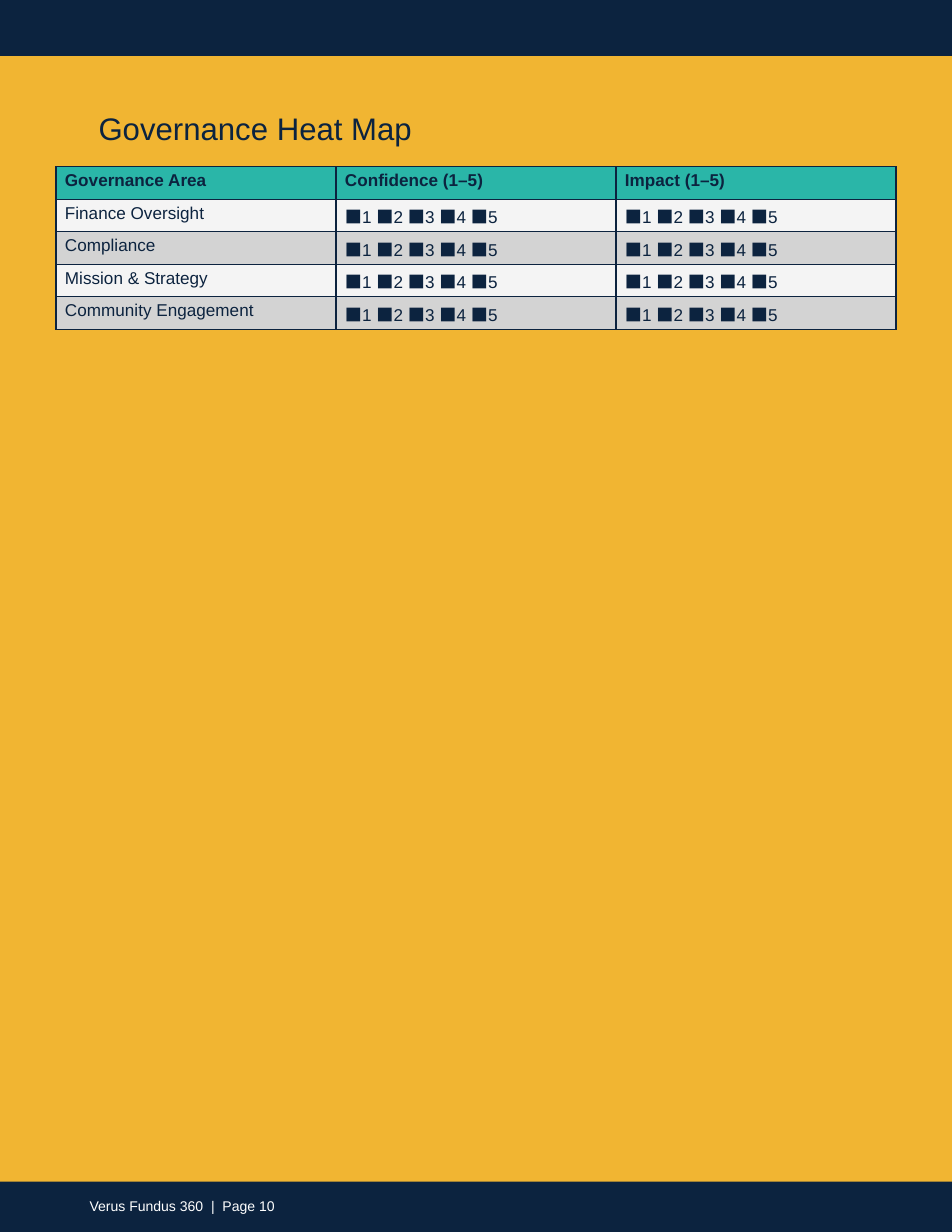
from lxml.etree import SubElement
from pptx import Presentation
from pptx.dml.color import RGBColor
from pptx.enum.shapes import MSO_SHAPE as Preset
from pptx.enum.text import MSO_ANCHOR as Anchor, MSO_AUTO_SIZE as AutoSize, PP_ALIGN as Align
from pptx.oxml.ns import qn
from pptx.util import Inches, Pt

COLORS = {"navy": "0C233F", "gold": "F1B532", "teal": "2AB6A8",
          "light": "F4F4F4", "gray": "D3D3D3", "white": "FFFFFF"}
COLORS = {name: RGBColor.from_string(code) for name, code in COLORS.items()}
BOX = "■"
SCALE = " ".join(f"{BOX}{score}" for score in range(1, 6))
HEADINGS = ["Governance Area", "Confidence (1–5)", "Impact (1–5)"]
AREAS = ["Finance Oversight", "Compliance", "Mission & Strategy", "Community Engagement"]
WIDTH, HEIGHT = 8.5, 11
COLUMN, ROW = 2.5, 0.29


def write(frame, text, size=11, color="navy", bold=False, indent=0.01, top=0):
    """Fill a text frame with one left-aligned line, setting box symbols in their own font."""
    frame.margin_left = frame.margin_right = frame.margin_bottom = 0
    frame.margin_top = Inches(top)
    para = frame.paragraphs[0]
    para.alignment = Align.LEFT
    properties = para._p.get_or_add_pPr()
    properties.set("marL", str(Inches(indent)))
    properties.set("indent", "0")
    pieces = text.replace(BOX, f"\n{BOX}\n").split("\n")
    for piece in filter(None, pieces):
        span = para.add_run()
        span.text = piece
        font = span.font
        font.name = "Noto Sans CJK JP" if piece == BOX else "Arial"
        font.size, font.bold = Pt(size), bold
        font.color.rgb = COLORS[color]
        if piece == BOX:
            SubElement(font._element, qn("a:ea")).set("typeface", font.name)


def add_borders(cell, color="navy", width=0.75):
    properties = cell._tc.get_or_add_tcPr()
    for side in ("lnL", "lnR", "lnT", "lnB"):
        line = SubElement(properties, qn(f"a:{side}"), w=str(Pt(width)))
        fill = SubElement(line, qn("a:solidFill"))
        SubElement(fill, qn("a:srgbClr"), val=str(COLORS[color]))


deck = Presentation()
deck.slide_width, deck.slide_height = Inches(WIDTH), Inches(HEIGHT)
page = deck.slides.add_slide(deck.slide_layouts[5])
page.background.fill.solid()
page.background.fill.fore_color.rgb = COLORS["gold"]

# Header and footer bands
for top, height in ((0, 0.5), (HEIGHT - 0.45, 0.45)):
    band = page.shapes.add_shape(Preset.RECTANGLE, 0, Inches(top), Inches(WIDTH), Inches(height))
    band.shadow.inherit = False
    band.fill.solid()
    band.fill.fore_color.rgb = COLORS["navy"]
    band.line.fill.background()

# Title and footer text
title = page.shapes.title
title.left, title.top, title.width, title.height = map(Inches, (0.87, 0.97, 2.82, 0.36))
title.text_frame.vertical_anchor = Anchor.TOP
title.text_frame.auto_size = AutoSize.NONE
title.text_frame.word_wrap = False
write(title.text_frame, "Governance Heat Map", size=20, top=0.01)

footer = page.shapes.add_textbox(*map(Inches, (0.79, 10.69, 1.81, 0.17)))
footer.text_frame.word_wrap = False
write(footer.text_frame, "Verus Fundus 360  |  Page 10", size=9, color="white")

# Heat map table
rows = [HEADINGS] + [[area, SCALE, SCALE] for area in AREAS]
frame = page.shapes.add_table(len(rows), len(HEADINGS), Inches(0.5), Inches(1.49),
                              Inches(COLUMN * len(HEADINGS)), Inches(ROW * len(rows)))
table = frame.table
for column in table.columns:
    column.width = Inches(COLUMN)
for index, texts in enumerate(rows):
    table.rows[index].height = Inches(ROW)
    shade = "teal" if index == 0 else ("gray", "light")[index % 2]
    for cell, text in zip(table.rows[index].cells, texts):
        add_borders(cell)
        cell.fill.solid()
        cell.fill.fore_color.rgb = COLORS[shade]
        cell.margin_left = cell.margin_right = cell.margin_bottom = 0
        cell.margin_top = Inches(0.04)
        write(cell.text_frame, text, bold=index == 0, indent=0.08)

deck.save("out.pptx")
